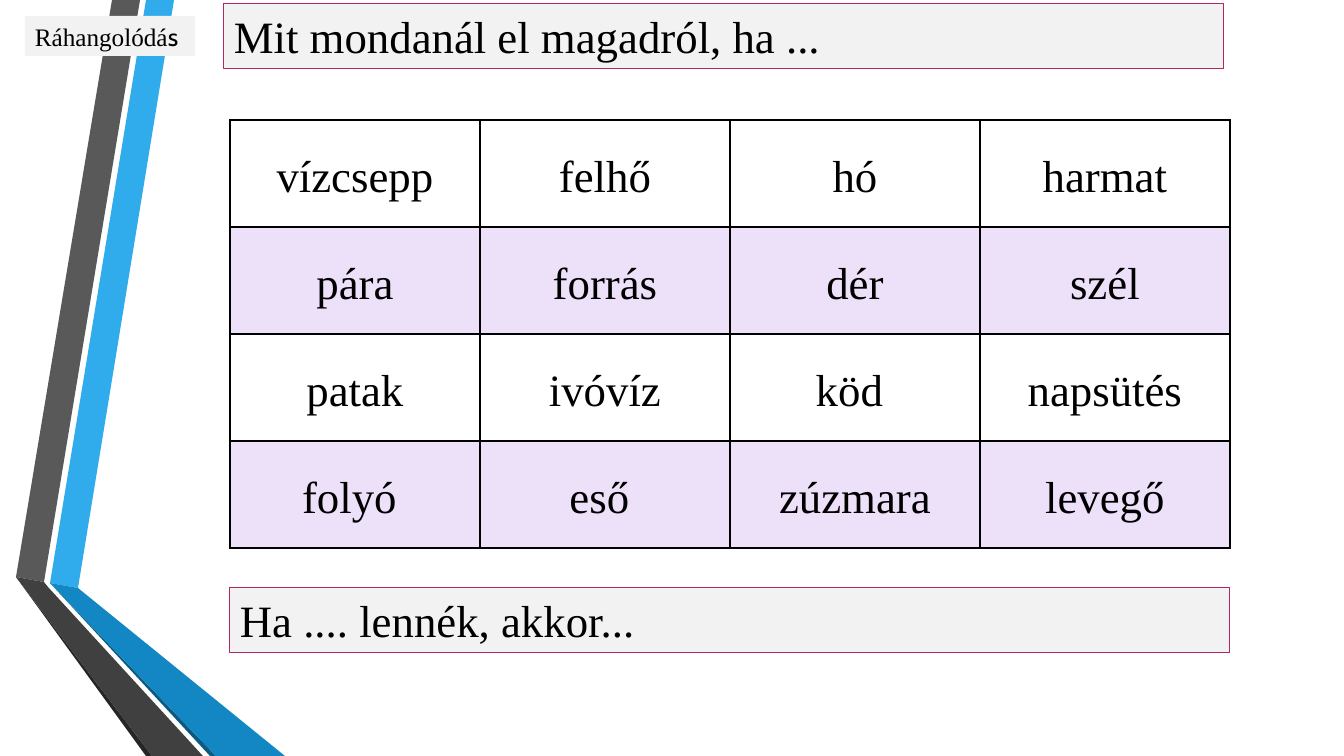
"""Build the warm-up slide with a word table and two prompts."""
from lxml.etree import SubElement
from pptx import Presentation
from pptx.dml.color import RGBColor
from pptx.enum.text import MSO_ANCHOR, MSO_AUTO_SIZE, PP_ALIGN
from pptx.oxml.ns import qn
from pptx.util import Pt

PX = 914400 / 100.8
SLIDE_SIZE = (1344, 756)
FONT = "Times New Roman"
LABEL_FONT = "Cabin"

COLORS = {
    "text": "000000", "box": "F2F2F2", "outline": "AF2764", "band": "EDE0F9",
    "blue": "30ACEC", "blue_fold": "1287C3", "blue_edge": "0C5A82",
    "gray": "595959", "gray_fold": "404040", "gray_edge": "262626",
}

RIBBONS = [
    ("blue", [(50, 583), (78, 588), (174, 0), (146, 0)]),
    ("gray", [(140, 0), (112, 0), (16, 577), (44, 582)]),
    ("gray_edge", [(16, 577), (146, 756), (152, 756)]),
    ("blue_edge", [(50, 583), (210, 756), (216, 756)]),
    ("blue_fold", [(50, 583), (216, 756), (285, 756), (78, 588)]),
    ("gray_fold", [(203, 756), (48, 587), (44, 582), (16, 577), (152, 756)]),
]

WORDS = [
    ["vízcsepp", "felhő", "hó", "harmat"],
    ["pára", "forrás", "dér", "szél"],
    ["patak", "ivóvíz", "köd ", "napsütés"],
    ["folyó ", "eső ", "zúzmara", "levegő"],
]
TABLE_LEFT, TABLE_TOP = 230, 120
COLUMN_WIDTH, ROW_HEIGHT = 250, 107

BOXES = [
    ((230, 588, 1000, 65), 32, "outline", True, [("Ha .... lennék, akkor...", FONT)]),
    ((224, 4, 1000, 65), 32, "outline", True, [("Mit mondanál el magadról, ha ...", FONT)]),
    ((25, 16, 170, 40), 18, None, False, [("Ráhangolódá", FONT), ("s", LABEL_FONT)]),
]


def emu(pixels):
    return round(pixels * PX)


def color(name):
    return RGBColor.from_string(COLORS[name])


def paint(fill, name):
    fill.solid()
    fill.fore_color.rgb = color(name)


def add_ribbon(slide, name, points):
    builder = slide.shapes.build_freeform(*points[0], scale=PX)
    builder.add_line_segments(points[1:], close=True)
    shape = builder.convert_to_shape()
    shape.shadow.inherit = False
    paint(shape.fill, name)
    shape.line.fill.background()


def add_borders(cell):
    properties = cell._tc.get_or_add_tcPr()
    for side in ("lnL", "lnR", "lnT", "lnB"):
        line = SubElement(properties, qn(f"a:{side}"), w=str(Pt(1.5)))
        fill = SubElement(line, qn("a:solidFill"))
        SubElement(fill, qn("a:srgbClr"), val=COLORS["text"])


def fill_cell(cell, word, banded):
    add_borders(cell)
    if banded:
        paint(cell.fill, "band")
    else:
        cell.fill.background()
    cell.vertical_anchor = MSO_ANCHOR.MIDDLE
    cell.margin_left = cell.margin_right = emu(6)
    cell.margin_top = cell.margin_bottom = 0
    paragraph = cell.text_frame.paragraphs[0]
    paragraph.text = word
    paragraph.alignment = PP_ALIGN.CENTER
    paragraph.line_spacing = 1.15
    paragraph.font.name = FONT
    paragraph.font.size = Pt(32)
    paragraph.font.color.rgb = color("text")


def add_word_table(slide):
    rows, columns = len(WORDS), len(WORDS[0])
    table = slide.shapes.add_table(
        rows, columns, emu(TABLE_LEFT), emu(TABLE_TOP),
        emu(columns * COLUMN_WIDTH), emu(rows * ROW_HEIGHT)).table
    table.first_row = table.horz_banding = False
    for row_index, words in enumerate(WORDS):
        for column_index, word in enumerate(words):
            fill_cell(table.cell(row_index, column_index), word, row_index % 2 == 1)


def add_box(slide, place, size, outline, wrap, runs):
    box = slide.shapes.add_textbox(*map(emu, place))
    paint(box.fill, "box")
    if outline:
        box.line.color.rgb = color(outline)
        box.line.width = Pt(0.75)
    frame = box.text_frame
    frame.word_wrap = wrap
    frame.auto_size = MSO_AUTO_SIZE.SHAPE_TO_FIT_TEXT
    paragraph = frame.paragraphs[0]
    paragraph.font.size = Pt(size)
    paragraph.font.color.rgb = color("text")
    for text, font in runs:
        run = paragraph.add_run()
        run.text = text
        run.font.name = font


def main():
    presentation = Presentation()
    presentation.slide_width, presentation.slide_height = map(emu, SLIDE_SIZE)
    slide = presentation.slides.add_slide(presentation.slide_layouts[6])
    for name, points in RIBBONS:
        add_ribbon(slide, name, points)
    add_word_table(slide)
    for box in BOXES:
        add_box(slide, *box)
    presentation.save("out.pptx")


if __name__ == "__main__":
    main()
